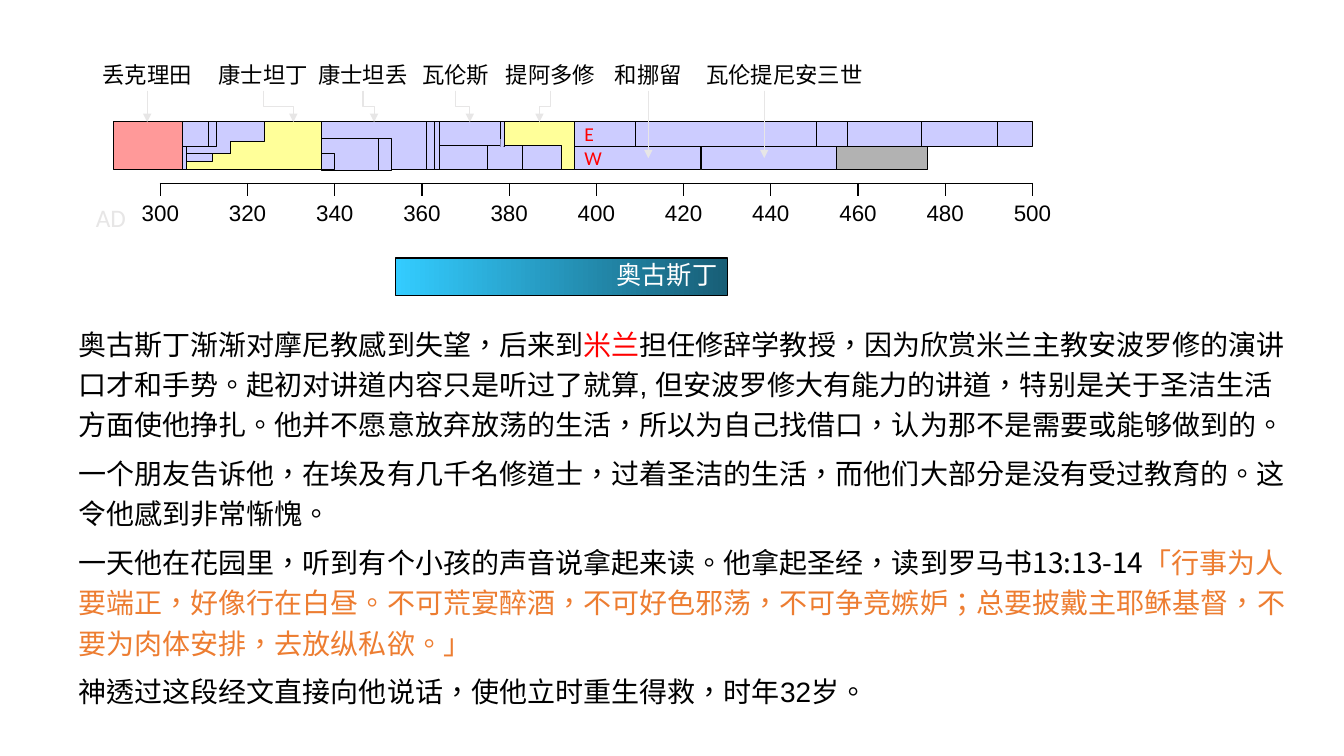
import dataclasses
import typing

import pptx
import pptx.dml.color
import pptx.enum.shapes
import pptx.enum.text
import pptx.oxml
import pptx.oxml.ns
import pptx.util
from pptx.util import Inches, Pt

LILAC, YELLOW, ROSE, GREY = "CCCCFF", "FFFF99", "FF9999", "B2B2B2"
BLACK, WHITE, RED, PALE, ORANGE = "000000", "FFFFFF", "FF0000", "E7E6E6", "ED7D31"
SANS, HAN = "Arial", "Noto Sans CJK SC"
LEFT, YEAR = 1.59, 0.04325  # inches at 300, inches per year
TOP, MID, HALF, FULL = 1.21, 1.44, 0.24, 0.47
ALIGN = pptx.enum.text.PP_ALIGN
qn = pptx.oxml.ns.qn


@dataclasses.dataclass
class Span:
    start: float
    end: float
    top: float
    high: float
    fill: str = LILAC
    edge: bool = True
    text: str = ""


@dataclasses.dataclass
class Name:
    text: str
    mid: float
    wide: float
    stem: float
    tip: float
    low: float = TOP


# Blocks from back to front
SPANS = [
    Span(305, 306, MID, HALF),
    Span(289.2, 305, TOP, FULL, ROSE),
    Span(337, 361, TOP, FULL),
    Span(361, 363, TOP, FULL),
    Span(363, 364, TOP, FULL),
    Span(395, 424, MID, HALF, text="W"),
    Span(424, 455, MID, HALF),
    Span(455, 476, MID, HALF, GREY),
    Span(306, 337, TOP, FULL, YELLOW),
    Span(306, 312, 1.52, 0.08),
    Span(306, 324, TOP, 0.31),
    Span(311, 313, TOP, HALF),
    Span(305, 311, TOP, HALF),
    Span(316, 324, 1.4, 0.12, YELLOW),
    Span(316.25, 324.25, 1.41, 0.12, YELLOW, edge=False),
    Span(395, 409, TOP, HALF, text="E"),
    Span(409, 450.5, TOP, HALF),
    Span(450.5, 457.5, TOP, HALF),
    Span(457.5, 474.5, TOP, HALF),
    Span(474.5, 492, TOP, HALF),
    Span(492, 500, TOP, HALF),
    Span(364, 378, TOP, HALF),
    Span(364, 375, MID, HALF),
    Span(379, 395, TOP, FULL, YELLOW),
    Span(375, 383, MID, HALF),
    Span(378, 379, TOP, HALF),
    Span(378, 378.75, 1.38, 0.08, edge=False),
    Span(383, 392, MID, HALF),
    Span(337, 350, 1.37, 0.32),
    Span(350, 353, 1.37, 0.32),
    Span(337, 340, 1.52, 0.16),
]

NAMES = [
    Name("丢克理田", 1.46, 0.89, 1.46, 1.46),
    Name("康士坦丁", 2.61, 0.89, 2.61, 2.91),
    Name("康士坦丢", 3.6, 0.89, 3.6, 3.71),
    Name("瓦伦斯", 4.52, 0.67, 4.52, 4.66),
    Name("提阿多修", 5.46, 0.89, 5.46, 5.35),
    Name("和挪留", 6.43, 0.67, 6.43, 6.43, 1.57),
    Name("瓦伦提尼安三世", 7.78, 1.56, 7.58, 7.58, 1.57),
]

STORY = [
    [("奥古斯丁渐渐对摩尼教感到失望，后来到", BLACK, SANS), ("米兰", RED, SANS),
     ("担任修辞学教授，因为欣赏米兰主教安波罗修的演讲口才和手势。起初对讲道内容只是听过了就算, "
      "但安波罗修大有能力的讲道，特别是关于圣洁生活方面使他挣扎。"
      "他并不愿意放弃放荡的生活，所以为自己找借口，认为那不是需要或能够做到的。", BLACK, SANS)],
    [("一个朋友告诉他，在埃及有几千名修道士，过着圣洁的生活，而他们", BLACK, SANS),
     ("大部分是没有受过教育的。这令他感到非常惭愧。", BLACK, HAN)],
    [("一天他在花园里，听到有个小孩的声音说拿起来读。他拿起圣经，读到罗马书13:13-14", BLACK, HAN),
     ("「行事为人要端正，好像行在白昼。不可荒宴醉酒，不可好色邪荡，不可争竞嫉妒；总要披", ORANGE, HAN),
     ("戴主耶稣基督，不要为肉体安排，去放纵私欲。」", ORANGE, SANS)],
    [("神透过这段经文直接向他说话，使他立时重生得救，时年32岁。", BLACK, SANS)],
]


def color(code: str) -> pptx.dml.color.RGBColor:
    return pptx.dml.color.RGBColor.from_string(code)


def style(run: typing.Any, size: float, code: str, face: str = "Calibri") -> None:
    run.font.size, run.font.name = Pt(size), face
    run.font.color.rgb = color(code)
    run._r.get_or_add_rPr().set("lang", "zh-TW")


def label(shape: typing.Any, text: str, size: float, code: str, align: typing.Any) -> None:
    frame = shape.text_frame
    frame.text, frame.word_wrap = text, False
    frame.vertical_anchor = pptx.enum.text.MSO_ANCHOR.MIDDLE
    frame.paragraphs[0].alignment = align
    style(frame.paragraphs[0].runs[0], size, code)


def block(slide: typing.Any, item: Span) -> typing.Any:
    shape = slide.shapes.add_shape(
        pptx.enum.shapes.MSO_SHAPE.RECTANGLE,
        Inches(LEFT + (item.start - 300) * YEAR), Inches(item.top),
        Inches((item.end - item.start) * YEAR), Inches(item.high))
    shape.shadow.inherit = False
    shape.fill.solid()
    shape.fill.fore_color.rgb = color(item.fill)
    if item.edge:
        shape.line.color.rgb, shape.line.width = color(BLACK), Pt(0.75)
    else:
        shape.line.fill.background()
    if item.text:
        label(shape, item.text, 14, RED, ALIGN.LEFT)
    return shape


def note(slide: typing.Any, text: str, mid: float, top: float, wide: float,
         code: str = BLACK, size: float = 16) -> None:
    box = slide.shapes.add_textbox(Inches(mid - wide / 2), Inches(top), Inches(wide), Inches(0.35))
    box.text_frame.margin_left = box.text_frame.margin_right = 0
    label(box, text, size, code, ALIGN.CENTER)


def arrow(slide: typing.Any, item: Name) -> None:
    kinds, top = pptx.enum.shapes.MSO_CONNECTOR, 0.9
    shift = item.tip - item.stem
    if shift:
        # A quarter turn makes the elbow leave downward
        x, y = (item.stem + item.tip) / 2, (top + item.low) / 2
        w, h = (item.low - top) / 2, abs(shift) / 2
        line = slide.shapes.add_connector(
            kinds.ELBOW, Inches(x - w), Inches(y - h), Inches(x + w), Inches(y + h))
        frame = line._element.spPr.find(qn("a:xfrm"))
        frame.set("rot", "16200000" if shift > 0 else "5400000")
        if shift > 0:
            frame.set("flipH", "1")
    else:
        line = slide.shapes.add_connector(
            kinds.STRAIGHT, Inches(item.stem), Inches(top), Inches(item.tip), Inches(item.low))
    line.line.color.rgb, line.line.width = color(PALE), Pt(0.75)
    tail = pptx.oxml.parse_xml(f'<a:tailEnd {pptx.oxml.ns.nsdecls("a")} type="triangle"/>')
    line.line._get_or_add_ln().append(tail)
    line._element.spPr.append(pptx.oxml.parse_xml(f'<a:effectLst {pptx.oxml.ns.nsdecls("a")}/>'))


def strip(slide: typing.Any, count: int, left: float, top: float, high: float, edge: str) -> typing.Any:
    frame = slide.shapes.add_table(1, count, Inches(left), Inches(top),
                                   Inches(count * 20 * YEAR), Inches(high))
    table = frame.table
    table.first_row = table.horz_banding = False
    for cell in table.iter_cells():
        for side in "LRTB":
            cell._tc.get_or_add_tcPr().append(pptx.oxml.parse_xml(
                f'<a:ln{side} {pptx.oxml.ns.nsdecls("a")} w="12700"><a:solidFill>'
                f'<a:srgbClr val="{edge}"/></a:solidFill></a:ln{side}>'))
        cell.fill.background()
    return table


def scale(slide: typing.Any) -> None:
    strip(slide, 10, LEFT, 1.82, 0.4, BLACK)
    years = strip(slide, 11, LEFT - 10 * YEAR, 1.95, 0.37, WHITE)
    for i, cell in enumerate(years.iter_cells()):
        cell.fill.solid()
        cell.fill.fore_color.rgb = color(WHITE)
        cell.text_frame.text = str(300 + 20 * i)
        cell.margin_left = cell.margin_right = 0
        cell.text_frame.paragraphs[0].alignment = ALIGN.CENTER
        style(cell.text_frame.paragraphs[0].runs[0], 16, BLACK, SANS)


def story(slide: typing.Any) -> None:
    frame = slide.shapes.add_textbox(Inches(0.68), Inches(3.13), Inches(12.29), Inches(4)).text_frame
    frame.word_wrap = True
    for i, parts in enumerate(STORY):
        para = frame.add_paragraph() if i else frame.paragraphs[0]
        para.line_spacing, para.space_after = 1.2, Pt(6)
        for text, code, face in parts:
            run = para.add_run()
            run.text = text
            style(run, 20, code, face)


def main() -> None:
    deck = pptx.Presentation()
    deck.slide_width, deck.slide_height = Inches(13.33), Inches(7.5)
    slide = deck.slides.add_slide(deck.slide_layouts[6])
    # Timeline
    scale(slide)
    note(slide, "AD", 1.1, 1.98, 0.3, PALE, 18)
    for span in SPANS:
        block(slide, span)
    for name in NAMES:
        note(slide, name.text, name.mid, 0.56, name.wide)
        arrow(slide, name)
    # Gradient bar
    bar = block(slide, Span(354, 430, 2.56, 0.37))
    bar.fill.gradient()
    bar.fill.gradient_angle = 0
    for stop, code in zip(bar.fill.gradient_stops, ("33CCFF", "185E76")):
        stop.color.rgb = color(code)
    label(bar, "奥古斯丁", 18, WHITE, ALIGN.RIGHT)
    bar.text_frame.paragraphs[0].line_spacing = 0.85
    # Body text
    story(slide)
    deck.save("out.pptx")


if __name__ == "__main__":
    main()
